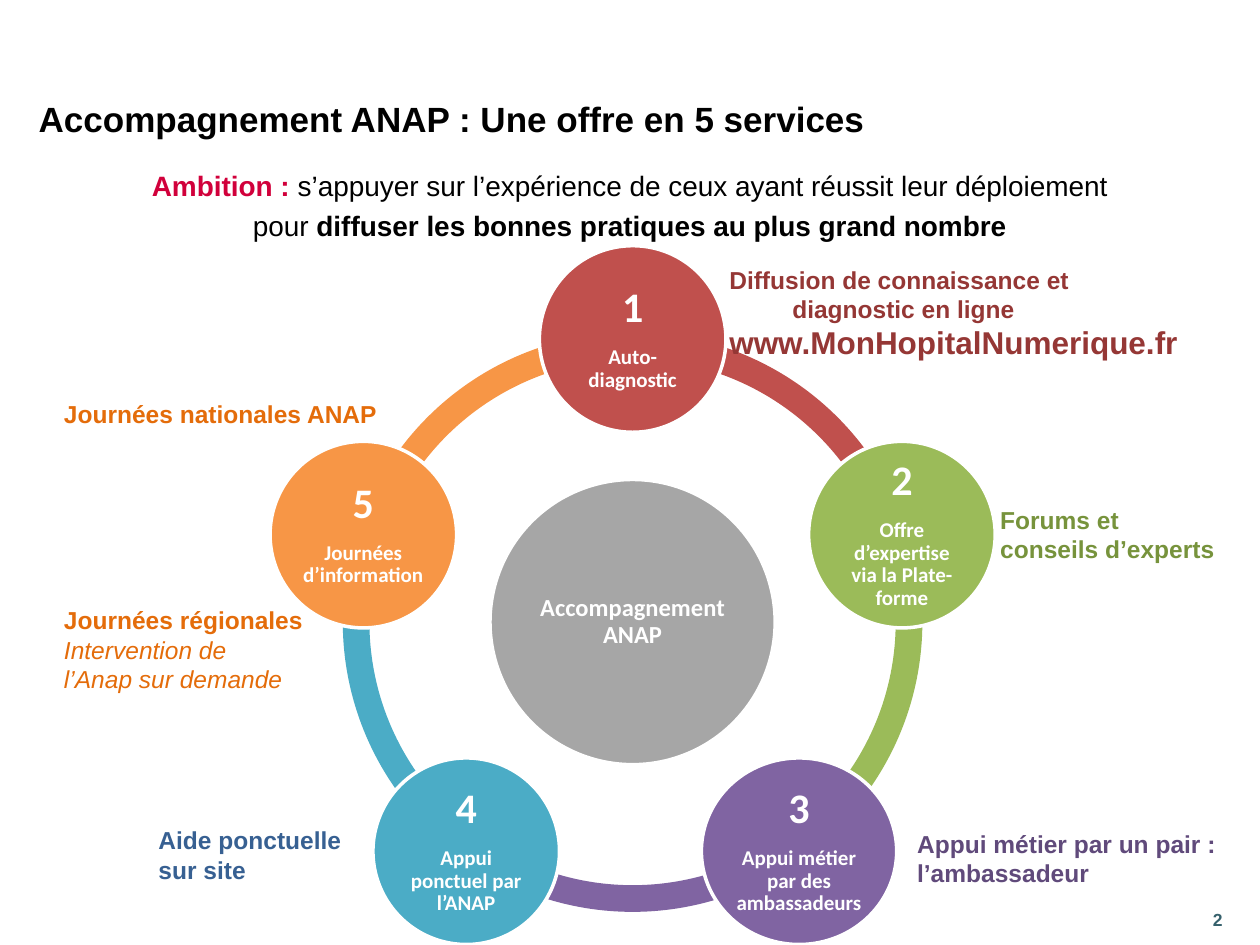
from dataclasses import dataclass
from math import cos, radians, sin

from pptx import Presentation
from pptx.dml.color import RGBColor
from pptx.enum.shapes import MSO_SHAPE
from pptx.enum.text import MSO_ANCHOR, MSO_AUTO_SIZE, PP_ALIGN
from pptx.util import Pt

ELLIPSE, ARC = MSO_SHAPE.OVAL, MSO_SHAPE.BLOCK_ARC
MIDDLE, TOP = MSO_ANCHOR.MIDDLE, MSO_ANCHOR.TOP
LEFT, CENTER = PP_ALIGN.LEFT, PP_ALIGN.CENTER
FIT = MSO_AUTO_SIZE.SHAPE_TO_FIT_TEXT

COLORS = {
    "black": "000000", "white": "FFFFFF", "grey": "A6A6A6",
    "red": "C0504D", "green": "9BBB59", "purple": "8064A2",
    "blue": "4BACC6", "orange": "F79646",
    "dark red": "953735", "dark green": "77933C", "dark purple": "604A7B",
    "dark blue": "376092", "dark orange": "E46C0A",
    "crimson": "D1003B", "teal": "36616C",
}

# Ring geometry
CX, CY = 361.5, 355.5
RING, ORBIT = 331.2, 161.8
NODE, HUB = 106.6, 163
STEP = 72


@dataclass
class Service:
    label: str
    color: str
    width: float = NODE


@dataclass
class Run:
    text: str
    color: str
    size: float = 14
    bold: bool = True
    italic: bool = False


@dataclass
class Line:
    runs: list[Run]
    align: PP_ALIGN = LEFT
    before: float = 0


@dataclass
class Note:
    left: float
    top: float
    width: float
    height: float
    lines: list[Line]
    wrap: bool = True
    anchor: MSO_ANCHOR = TOP


def rgb(name: str) -> RGBColor:
    return RGBColor.from_string(COLORS[name])


def style(r, font: str, size: float, color: str, bold: bool = True,
          italic: bool = False) -> None:
    r.font.name, r.font.size = font, Pt(size)
    r.font.bold, r.font.italic = bold, italic
    r.font.color.rgb = rgb(color)


def draw_arc(s, start: float, color: str) -> None:
    sp = s.shapes.add_shape(ARC, Pt(CX - RING / 2), Pt(CY - RING / 2),
                            Pt(RING), Pt(RING))
    sp.shadow.inherit = False
    # Angle adjustments are stored as 0.6 per degree
    for i, value in enumerate((start % 360 * 0.6, (start + STEP) % 360 * 0.6, 0.046)):
        sp.adjustments[i] = value
    sp.fill.solid()
    sp.fill.fore_color.rgb = rgb(color)
    sp.line.fill.background()


def draw_disc(s, cx: float, cy: float, width: float, height: float, color: str,
              texts: list[tuple[str, float]], inset: float = 2) -> None:
    sp = s.shapes.add_shape(ELLIPSE, Pt(cx - width / 2), Pt(cy - height / 2),
                            Pt(width), Pt(height))
    sp.shadow.inherit = False
    sp.fill.solid()
    sp.fill.fore_color.rgb = rgb(color)
    sp.line.color.rgb = rgb("white")
    sp.line.width = Pt(2)
    tf = sp.text_frame
    tf.word_wrap, tf.vertical_anchor = True, MIDDLE
    tf.margin_left = tf.margin_right = tf.margin_top = tf.margin_bottom = Pt(inset)
    tf.text = "\n".join(text for text, _ in texts)
    for p, (_, size) in zip(tf.paragraphs, texts):
        p.alignment, p.line_spacing = CENTER, 0.9
        p.space_after = Pt(size * 0.35)
        style(p.runs[0], "Calibri", size, "white")


def draw_note(s, note: Note) -> None:
    sp = s.shapes.add_textbox(Pt(note.left), Pt(note.top), Pt(note.width), Pt(note.height))
    tf = sp.text_frame
    tf.word_wrap, tf.vertical_anchor = note.wrap, note.anchor
    if not note.wrap:
        tf.auto_size = FIT
    for i, line in enumerate(note.lines):
        p = tf.paragraphs[0] if i == 0 else tf.add_paragraph()
        p.alignment = line.align
        if line.before:
            p.space_before = Pt(line.before)
        for run in line.runs:
            r = p.add_run()
            r.text = run.text
            style(r, "Arial", run.size, run.color, run.bold, run.italic)


def plain(color: str, *texts: str) -> list[Line]:
    return [Line([Run(text, color)]) for text in texts]


SERVICES = [
    Service("Auto-diagnostic", "red"),
    Service("Offre d’expertise via la Plate-forme", "green"),
    Service("Appui métier par des ambassadeurs", "purple", 111.6),
    Service("Appui ponctuel par l’ANAP", "blue"),
    Service("Journées d’information", "orange"),
]

HEADINGS = [
    # Page number
    Note(686, 511, 34, 29, [Line([Run("2", "teal", 10)])], anchor=MIDDLE),
    # Title
    Note(15, 50, 688, 35, [
        Line([Run("Accompagnement ANAP : Une offre en 5 services", "black", 20)]),
    ], anchor=MIDDLE),
]

NOTES = [
    Note(409.7, 147.6, 299.5, 63.4, [
        *plain("dark red", "Diffusion de connaissance et", "\tdiagnostic en ligne"),
        Line([Run("www.MonHopitalNumerique.fr", "dark red", 18)], CENTER),
    ], wrap=False),
    Note(564.5, 285, 155.5, 41, plain("dark green", "Forums et", "conseils d’experts")),
    Note(517, 470, 191, 41,
         plain("dark purple", "Appui métier par un pair : l’ambassadeur")),
    Note(83.5, 468, 147, 41, plain("dark blue", "Aide ponctuelle", "sur site")),
    Note(29.5, 224.6, 196, 177, [
        *plain("dark orange", "Journées nationales ANAP"),
        Line([Run("Journées régionales", "dark orange")], before=101),
        Line([Run("Intervention de", "dark orange", bold=False, italic=True)]),
        Line([Run("l’Anap sur demande", "dark orange", bold=False, italic=True)]),
    ]),
    # Ambition statement
    Note(0, 92.5, 720, 62, [
        Line([Run("Ambition : ", "crimson", 16),
              Run("s’appuyer sur l’expérience de ceux ayant réussit leur déploiement",
                  "black", 16, False)], CENTER),
        Line([Run("pour ", "black", 16, False),
              Run("diffuser les bonnes pratiques au plus grand nombre", "black", 16)],
             CENTER, 3.7),
    ]),
]


def main() -> None:
    prs = Presentation()
    prs.slide_width, prs.slide_height = Pt(720), Pt(540)
    s = prs.slides.add_slide(prs.slide_layouts[6])

    for note in HEADINGS:
        draw_note(s, note)

    # Ring: the last service's arc leads back to the first
    angles = [-90 + STEP * i for i in range(len(SERVICES))]
    for angle, service in reversed(list(zip(angles, SERVICES))):
        draw_arc(s, angle, service.color)

    # Hub and numbered services
    draw_disc(s, CX, CY, HUB, HUB, "grey", [("Accompagnement ANAP", 14)], 0)
    for number, (angle, service) in enumerate(zip(angles, SERVICES), 1):
        a = radians(angle)
        draw_disc(s, CX + ORBIT * cos(a), CY + ORBIT * sin(a), service.width, NODE,
                  service.color, [(str(number), 24), (service.label, 12)])

    # Comments around the ring
    for note in NOTES:
        draw_note(s, note)

    prs.save("out.pptx")


if __name__ == "__main__":
    main()
